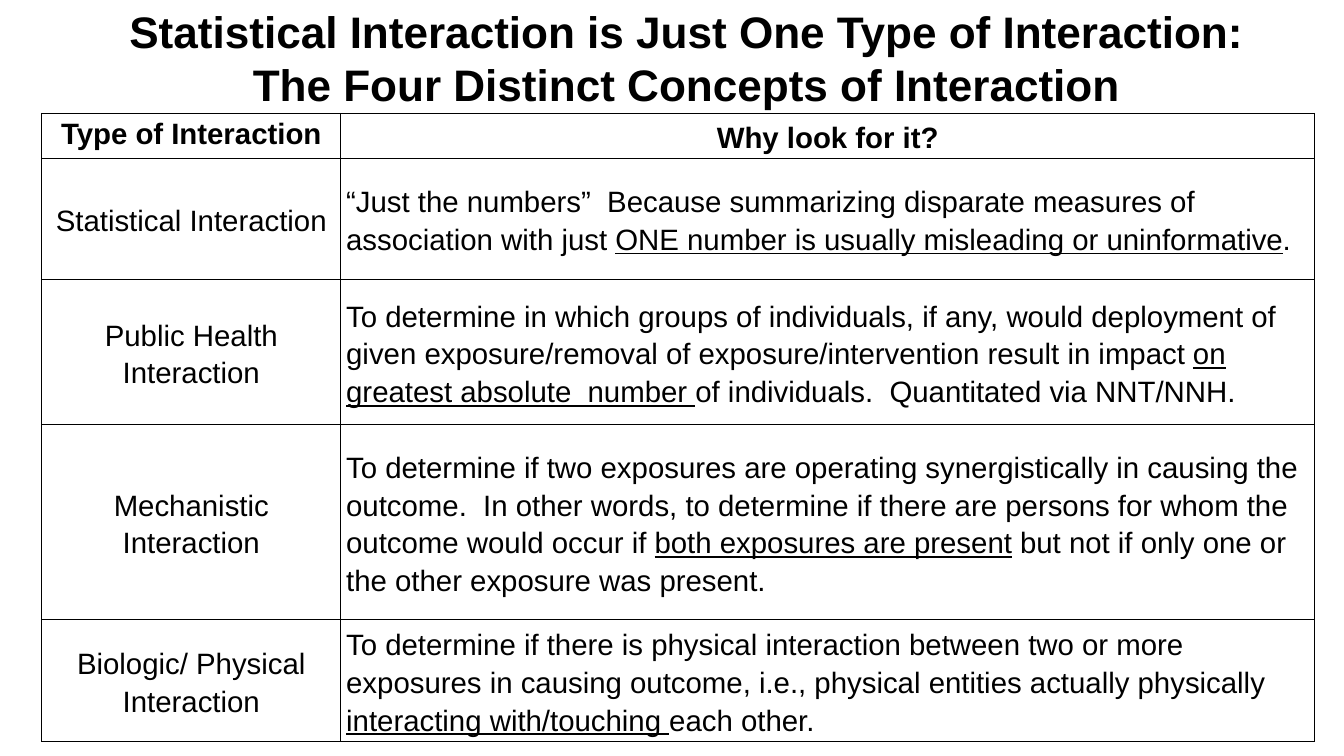
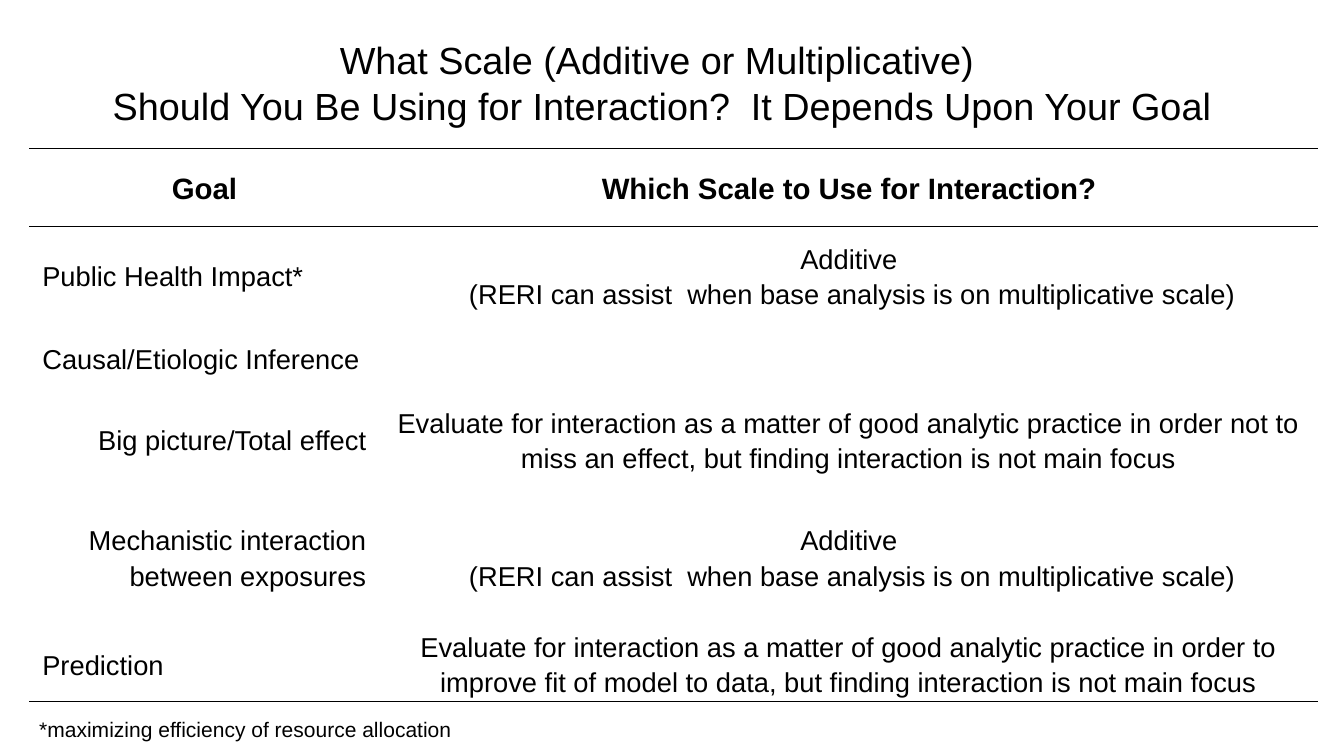
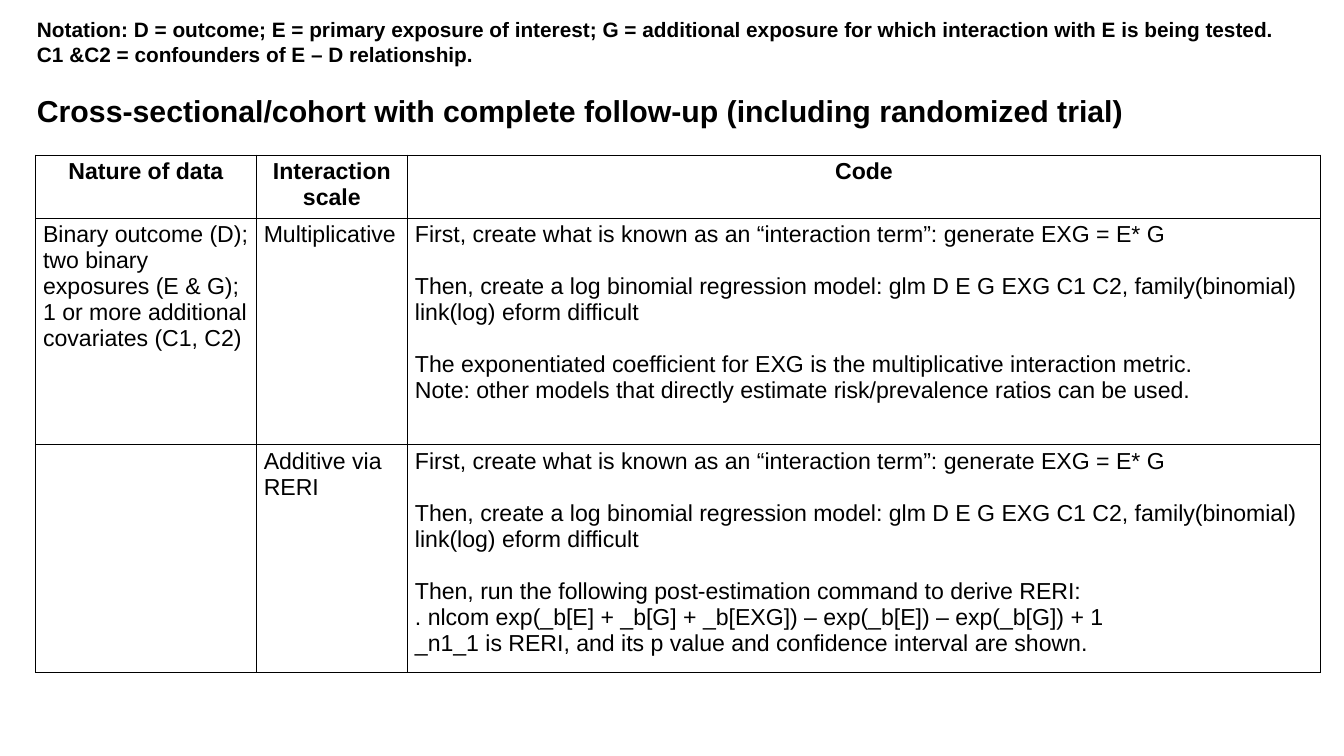
import dataclasses

import lxml.etree
import pptx
import pptx.dml.color
import pptx.enum.text
import pptx.oxml.ns
import pptx.util

ALIGN = pptx.enum.text.PP_ALIGN
ANCHOR = pptx.enum.text.MSO_ANCHOR
PX = 9144


@dataclasses.dataclass(frozen=True)
class Theme:
    """Colours, font and type sizes shared by the slides."""
    font: str = "Arial"
    ink: str = "000000"
    paper: str = "FFFFFF"
    title: float = 42
    subtitle: float = 36
    section: float = 28.8
    body: float = 28
    goal: float = 26
    code: float = 22
    footnote: float = 20
    notation: float = 19.8
    loose: float = 1.15
    rule: float = 1


@dataclasses.dataclass(frozen=True)
class Box:
    """A rectangle in px."""
    left: int
    top: int
    width: int
    height: int

    def inner(self, left, top, width, height):
        """Return a box placed relative to this one."""
        return Box(self.left + left, self.top + top, width, height)

    def emu(self):
        """Return left, top, width and height in EMU."""
        return [side * PX for side in (self.left, self.top, self.width, self.height)]


THEME = Theme()
PAGE = Box(0, 0, 1778, 1000)


def write(frame, text, size, bold=False, align=ALIGN.LEFT, spacing=1.0, before=0, gap=25):
    """Append text: blank lines part blocks, \\v breaks a line, |bars| underline."""
    for index, block in enumerate(text.split("\n\n")):
        for number, line in enumerate(block.split("\n")):
            paragraph = frame.paragraphs[-1]
            if paragraph.runs:
                paragraph = frame.add_paragraph()
            paragraph.alignment = align
            paragraph.line_spacing = spacing
            lead = gap if index else before
            paragraph.space_before = pptx.util.Pt(0 if number else lead)
            for order, piece in enumerate(line.split("|")):
                for turn, words in enumerate(piece.split("\v")):
                    if turn:
                        paragraph.add_line_break()
                    run = paragraph.add_run()
                    run.text = words
                    run.font.name = THEME.font
                    run.font.size = pptx.util.Pt(size)
                    run.font.bold = bold
                    run.font.underline = order % 2 == 1
                    run.font.color.rgb = pptx.dml.color.RGBColor.from_string(THEME.ink)


def add_text(slide, box, text, size, anchor=ANCHOR.TOP, **style):
    """Add a wrapping text box and return its text frame."""
    frame = slide.shapes.add_textbox(*box.emu()).text_frame
    frame.word_wrap = True
    frame.vertical_anchor = anchor
    write(frame, text, size, **style)
    return frame


def rule_cell(cell, edges):
    """Draw the named edges (L, R, T, B) of a cell and clear the others."""
    properties = cell._tc.get_or_add_tcPr()
    for edge in "LRTB":
        line = lxml.etree.SubElement(properties, pptx.oxml.ns.qn(f"a:ln{edge}"))
        if edge in edges:
            line.set("w", str(pptx.util.Pt(THEME.rule)))
            fill = lxml.etree.SubElement(line, pptx.oxml.ns.qn("a:solidFill"))
            lxml.etree.SubElement(fill, pptx.oxml.ns.qn("a:srgbClr"), val=THEME.ink)
        else:
            lxml.etree.SubElement(line, pptx.oxml.ns.qn("a:noFill"))
    cell.fill.background()


def add_grid(slide, box, leads, heights, rows, style, margins=(10, 5), edges=None):
    """Add a table; style(row, column) gives a cell's format, edges(row) its rules."""
    widths = [*leads, box.width - sum(leads)]
    table = slide.shapes.add_table(len(rows), len(widths), *box.emu()).table
    table.first_row = table.horz_banding = False
    for column, width in zip(table.columns, widths):
        column.width = width * PX
    for row, height in zip(table.rows, heights):
        row.height = height * PX
    for r, texts in enumerate(rows):
        for c, text in enumerate(texts):
            cell = table.cell(r, c)
            cell.margin_left = cell.margin_right = margins[0] * PX
            cell.margin_top = cell.margin_bottom = margins[1] * PX
            rule_cell(cell, edges(r) if edges else "LRTB")
            form = style(r, c)
            cell.vertical_anchor = form.pop("anchor", ANCHOR.TOP)
            if text:
                write(cell.text_frame, text, **form)


def concepts_slide(slide, page):
    """Build the table of the four concepts of interaction."""
    add_text(slide, page.inner(39, 13, 1738, 138),
             "Statistical Interaction is Just One Type of Interaction:\v"
             "The Four Distinct Concepts of Interaction",
             THEME.title, anchor=ANCHOR.BOTTOM, bold=True, align=ALIGN.CENTER)
    concepts = [
        ("Type of Interaction", "Why look for it?"),
        ("Statistical Interaction",
         "“Just the numbers”  Because summarizing disparate measures of association with just "
         "|ONE number is usually misleading or uninformative|."),
        ("Public Health Interaction",
         "To determine in which groups of individuals, if any, would deployment of given "
         "exposure/removal of exposure/intervention result in impact "
         "|on greatest absolute  number |of individuals.  Quantitated via NNT/NNH."),
        ("Mechanistic Interaction",
         "To determine if two exposures are operating synergistically in causing the outcome.  "
         "In other words, to determine if there are persons for whom the outcome would occur if "
         "|both exposures are present| but not if only one or the other exposure was present."),
        ("Biologic/ Physical Interaction",
         "To determine if there is physical interaction between two or more exposures in causing "
         "outcome, i.e., physical entities actually physically "
         "|interacting with/touching |each other."),
    ]

    def style(row, column):
        """Centre the header and the first column."""
        return dict(size=THEME.body, bold=row == 0, spacing=THEME.loose,
                    align=ALIGN.LEFT if row and column else ALIGN.CENTER,
                    anchor=ANCHOR.MIDDLE if row or column else ANCHOR.TOP)

    add_grid(slide, page.inner(55, 150, 1684, 806), [396], [59, 161, 192, 258, 136],
             concepts, style, margins=(7, 0))


def scale_slide(slide, page):
    """Build the table that matches a goal with a scale."""
    additive = "Additive\n (RERI can assist  when base analysis is on multiplicative scale)"
    evaluate = ("Evaluate for interaction as a matter of good analytic practice in order {}, "
                "but finding interaction is not main focus")
    goals = [
        ("Goal", "Which Scale to Use for Interaction?"),
        ("Public Health Impact*", additive),
        ("Causal/Etiologic Inference", ""),
        ("Big picture/Total effect", evaluate.format("not to miss an effect")),
        ("Mechanistic interaction\n between exposures", additive),
        ("Prediction", evaluate.format("to improve fit of model to data")),
    ]
    subgoals = (3, 4)

    def style(row, column):
        """Set sub-goals to the right and other goals to the left."""
        goal_align = ALIGN.RIGHT if row in subgoals else ALIGN.LEFT
        return dict(size=THEME.goal if row else THEME.body, bold=row == 0,
                    spacing=THEME.loose, anchor=ANCHOR.MIDDLE,
                    align=ALIGN.CENTER if column or row == 0 else goal_align)

    def edges(row):
        """Rule the header on both sides and close the last row."""
        return ("T" if row < 2 else "") + ("B" if row in (0, len(goals) - 1) else "")

    add_grid(slide, page.inner(39, 196, 1705, 716), [463], [103, 130, 88, 128, 183, 84],
             goals, style, margins=(17, 0), edges=edges)
    add_text(slide, page.inner(42, 938, 1501, 46),
             "*maximizing efficiency of resource allocation",
             THEME.footnote, spacing=THEME.loose)
    add_text(slide, page.inner(-3, 44, 1758, 131),
             "What Scale (Additive or Multiplicative) \v"
             "Should You Be Using for Interaction?  It Depends Upon Your Goal",
             THEME.subtitle, align=ALIGN.CENTER)


def code_slide(slide, page):
    """Build the table of code for each interaction scale."""
    heading = add_text(slide, page.inner(39, 67, 1722, 108),
                       "Notation: D = outcome; E = primary exposure of interest; G = additional "
                       "exposure for which interaction with E is being tested.\v"
                       "C1 &C2 = confounders of E – D relationship.",
                       THEME.notation, anchor=ANCHOR.BOTTOM, bold=True)
    write(heading, "Cross-sectional/cohort with complete follow-up (including randomized trial)",
          THEME.section, bold=True, before=24)
    model = ("First, create what is known as an “interaction term”: generate EXG = E* G\n\n"
             "Then, create a log binomial regression model: glm D E G EXG C1 C2, "
             "family(binomial) link(log) eform difficult\n\n")
    analyses = [
        ("Nature of data", "Interaction scale", "Code"),
        ("Binary outcome (D); two binary exposures (E & G); 1 or more additional covariates "
         "(C1, C2)",
         "Multiplicative",
         model + "The exponentiated coefficient for EXG is the multiplicative interaction metric.\n"
         "Note: other models that directly estimate risk/prevalence ratios can be used."),
        ("", "Additive via RERI",
         model + "Then, run the following post-estimation command to derive RERI:\n"
         ". nlcom exp(_b[E] + _b[G] + _b[EXG]) – exp(_b[E]) – exp(_b[G]) + 1\n"
         "_n1_1 is RERI, and its p value and confidence interval are shown."),
    ]

    def style(row, column):
        """Centre the bold header over plain rows."""
        return dict(size=THEME.code, bold=row == 0,
                    align=ALIGN.LEFT if row else ALIGN.CENTER)

    add_grid(slide, page.inner(47, 205, 1700, 684), [292, 200], [83, 300, 301],
             analyses, style)


def main():
    """Build the slides and save them."""
    deck = pptx.Presentation()
    deck.slide_width, deck.slide_height = PAGE.width * PX, PAGE.height * PX
    for build in (concepts_slide, scale_slide, code_slide):
        slide = deck.slides.add_slide(deck.slide_layouts[6])
        slide.background.fill.solid()
        slide.background.fill.fore_color.rgb = pptx.dml.color.RGBColor.from_string(THEME.paper)
        build(slide, PAGE)
    deck.save("out.pptx")


if __name__ == "__main__":
    main()
